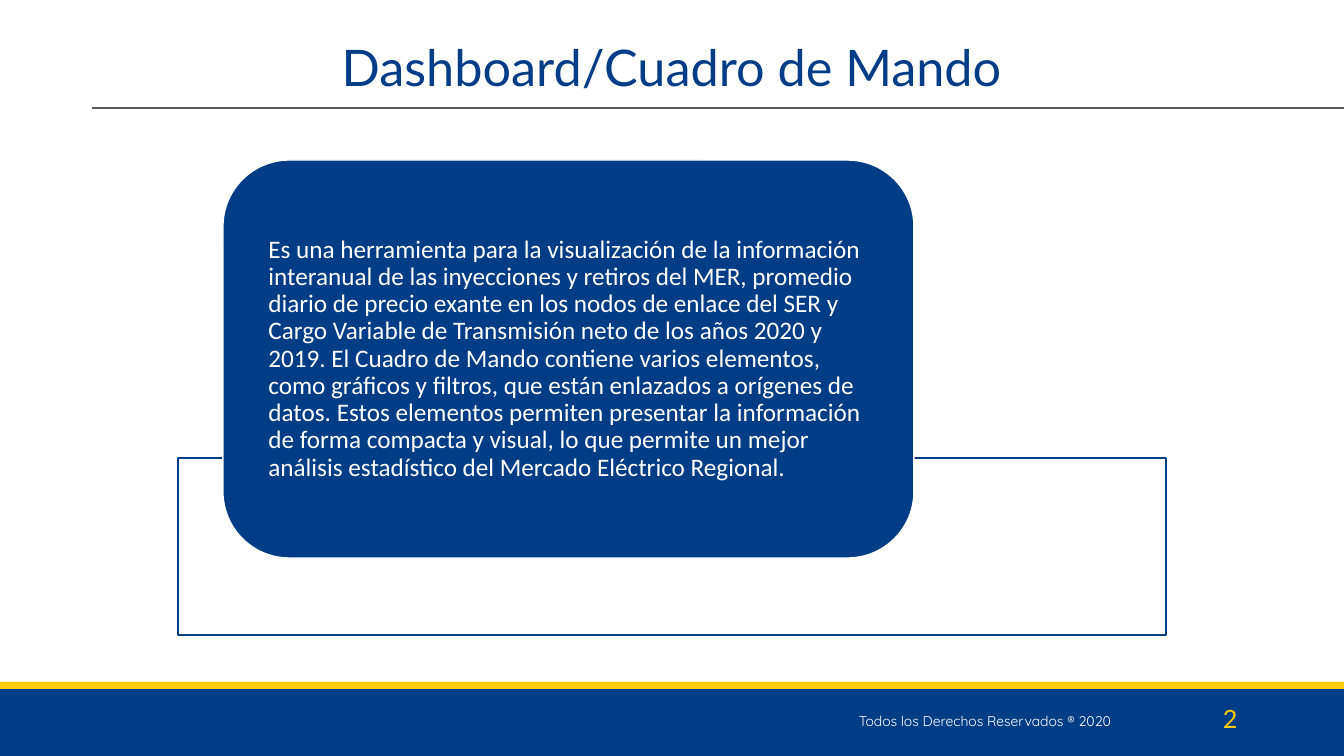
from pptx import Presentation
from pptx import util as u
from pptx.dml.color import RGBColor
from pptx.enum import shapes, text
from pptx.oxml import parse_xml
from pptx.oxml.ns import nsdecls, qn

PX = 914400 / 100.8
BLUE, YELLOW, WHITE, GREY = "003D86", "FFCC00", "FFFFFF", "58585A"


def px(*lengths):
    """Turn pixel lengths into EMU."""
    return [u.Emu(round(n * PX)) for n in lengths]


def paint(target, color):
    """Give a fill, or a font or line, a solid colour."""
    if hasattr(target, "solid"):
        target.solid()
        target.fore_color.rgb = RGBColor.from_string(color)
    else:
        target.color.rgb = RGBColor.from_string(color)


prs = Presentation()
prs.slide_width, prs.slide_height = px(1344, 756)
slide = prs.slides.add_slide(prs.slide_layouts[5])
paint(slide.background.fill, WHITE)

# Footer bands, outlined frame and description panel
panels = []
for kind, box, fill, outline in (
    ("RECTANGLE", (0, 689, 1344, 67), BLUE, None),
    ("RECTANGLE", (0, 682, 1344, 7), YELLOW, None),
    ("RECTANGLE", (178, 458, 988, 177), WHITE, BLUE),
    ("ROUNDED_RECTANGLE", (223, 160, 691, 398), BLUE, WHITE),
):
    panel = slide.shapes.add_shape(shapes.MSO_SHAPE[kind], *px(*box))
    panel.shadow.inherit = False
    paint(panel.fill, fill)
    if outline:
        paint(panel.line, outline)
        panel.line.width = u.Pt(1)
    else:
        panel.line.fill.background()
    panels.append(panel)
frame, description = panels[2:]
frame_color = frame._element.spPr.find(qn("a:solidFill"))[0]
frame_color.append(parse_xml(f'<a:alpha {nsdecls("a")} val="90000"/>'))

rule = slide.shapes.add_connector(shapes.MSO_CONNECTOR.STRAIGHT, *px(92, 108, 1344, 108))
paint(rule.line, GREY)
rule.line.width = u.Pt(1.5)
rule._element.spPr.append(parse_xml(f'<a:effectLst {nsdecls("a")}/>'))

title = slide.shapes.title
title.left, title.top, title.width, title.height = px(92, 40, 1159, 61)
rights = slide.shapes.add_textbox(*px(849, 708, 292, 27))
page_number = slide.shapes.add_textbox(*px(1213, 698, 98, 40))

description_text = (
    "Es una herramienta para la visualización de la información interanual de las "
    "inyecciones y retiros del MER, promedio diario de precio exante en los nodos de "
    "enlace del SER y Cargo Variable de Transmisión neto de los años 2020 y 2019. "
    "El Cuadro de Mando contiene varios elementos, como gráficos y filtros, que están "
    "enlazados a orígenes de datos. Estos elementos permiten presentar la información "
    "de forma compacta y visual, lo que permite un mejor análisis estadístico del "
    "Mercado Eléctrico Regional."
)
LEFT, CENTER = text.PP_ALIGN.LEFT, text.PP_ALIGN.CENTER
TOP, MIDDLE = text.MSO_ANCHOR.TOP, text.MSO_ANCHOR.MIDDLE
for holder, wording, font, size, color, anchor, layout in (
    (title, "Dashboard/Cuadro de Mando", "Lato", 36, BLUE, MIDDLE,
     {"alignment": CENTER, "line_spacing": 0.9}),
    (rights, "Todos los Derechos Reservados ® 2020", "Quicksand", 10, WHITE, TOP,
     {"alignment": LEFT}),
    (page_number, "2", "Lato", 18, YELLOW, TOP, {"alignment": LEFT}),
    (description, description_text, "Calibri", 18, WHITE, MIDDLE,
     {"alignment": LEFT, "line_spacing": 0.9}),
):
    body = holder.text_frame
    body.text = wording
    body.word_wrap = True
    body.auto_size = text.MSO_AUTO_SIZE.NONE
    body.vertical_anchor = anchor
    paragraph = body.paragraphs[0]
    for name, value in layout.items():
        setattr(paragraph, name, value)
    for name, value in {"name": font, "size": u.Pt(size)}.items():
        setattr(paragraph.font, name, value)
    paint(paragraph.font, color)

insets = {"margin_left": 26, "margin_right": 26, "margin_top": 0, "margin_bottom": 0}
for name, value in insets.items():
    setattr(description.text_frame, name, px(value)[0])

prs.save("out.pptx")
